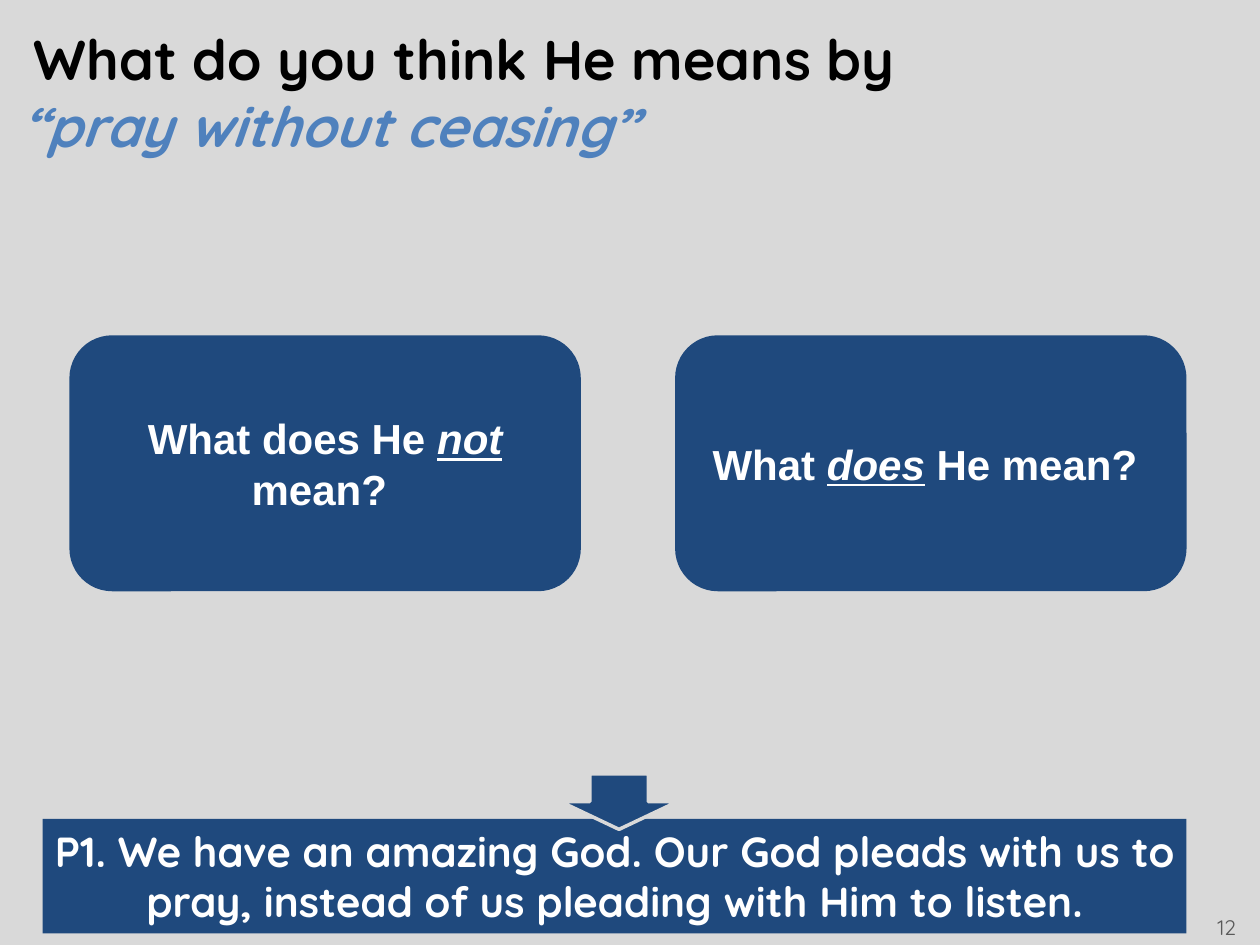
from pptx import Presentation
from pptx.dml.color import RGBColor
from pptx.enum.shapes import MSO_SHAPE
from pptx.enum.text import MSO_ANCHOR, PP_ALIGN
from pptx.util import Cm, Pt

# Content: a card is a list of (text, emphasised) runs
TITLE = "What do you think He means by"
QUOTE = "“pray without ceasing”"
CARDS = [
    [("What does He ", False), ("not", True), (" mean? ", False)],
    [("What ", False), ("does", True), (" He mean? ", False)],
]
POINT = ("P1. We have an amazing God. Our God pleads with us to pray, "
         "instead of us pleading with Him to listen.")
PAGE_NUMBER = "12"

COLORS = {"background": "D9D9D9", "navy": "1F497D", "blue": "4F81BD",
          "black": "000000", "white": "FFFFFF", "gray": "595959"}

# Card grid, in centimetres
CARD_LEFT, CARD_TOP, CARD_WIDTH, CARD_HEIGHT, CARD_GAP = 1.4, 6.76, 10.31, 5.16, 1.9


def color(name):
    return RGBColor.from_string(COLORS[name])


def write(shape, runs, size=24, font="Quicksand", fill="white", bold=True,
          italic=False, align=PP_ALIGN.LEFT, anchor=MSO_ANCHOR.TOP, wrap=True):
    """Fill a shape with one paragraph; runs is a string or (text, emphasised) pairs."""
    frame = shape.text_frame
    frame.word_wrap = wrap
    frame.vertical_anchor = anchor
    paragraph = frame.paragraphs[0]
    paragraph.alignment = align
    if isinstance(runs, str):
        runs = [(runs, False)]
    for text, emphasised in runs:
        run = paragraph.add_run()
        run.text = text
        run.font.name = font
        run.font.size = Pt(size)
        run.font.bold = bold
        run.font.italic = italic or emphasised
        run.font.underline = emphasised
        run.font.color.rgb = color(fill)


def add_box(slide, left, top, width, height):
    return slide.shapes.add_textbox(Cm(left), Cm(top), Cm(width), Cm(height))


def add_block(slide, kind, left, top, width, height):
    shape = slide.shapes.add_shape(kind, Cm(left), Cm(top), Cm(width), Cm(height))
    shape.shadow.inherit = False
    shape.fill.solid()
    shape.fill.fore_color.rgb = color("navy")
    shape.line.fill.background()
    return shape


def main():
    presentation = Presentation()
    presentation.slide_width, presentation.slide_height = Cm(25.4), Cm(19.05)
    slide = presentation.slides.add_slide(presentation.slide_layouts[6])
    slide.background.fill.solid()
    slide.background.fill.fore_color.rgb = color("background")

    # Heading and page number
    write(add_box(slide, 0.43, 0.36, 23.7, 1.4), TITLE, size=32, fill="black")
    write(add_box(slide, 19.25, 18.19, 5.92, 1.02), PAGE_NUMBER, size=12, fill="gray",
          bold=False, align=PP_ALIGN.RIGHT, anchor=MSO_ANCHOR.MIDDLE)

    # Key point with the arrow leading into it
    banner = add_block(slide, MSO_SHAPE.RECTANGLE, 0.86, 16.51, 23.06, 2.31)
    banner.text_frame.margin_left = banner.text_frame.margin_right = Cm(0.2)
    write(banner, POINT, align=PP_ALIGN.CENTER)
    arrow = add_block(slide, MSO_SHAPE.DOWN_ARROW, 11.3, 15.6, 2.36, 1.12)
    arrow.line.color.rgb = color("background")
    arrow.line.width = Pt(2)

    # Question cards
    for index, runs in enumerate(CARDS):
        left = CARD_LEFT + index * (CARD_WIDTH + CARD_GAP)
        card = add_block(slide, MSO_SHAPE.ROUNDED_RECTANGLE,
                         left, CARD_TOP, CARD_WIDTH, CARD_HEIGHT)
        write(card, runs, font="Arial", align=PP_ALIGN.CENTER, anchor=MSO_ANCHOR.MIDDLE)

    # Quoted phrase under the title
    write(add_box(slide, 0.18, 1.73, 13.18, 1.63), QUOTE, size=32, fill="blue",
          italic=True, wrap=False)

    presentation.save("out.pptx")


if __name__ == "__main__":
    main()
